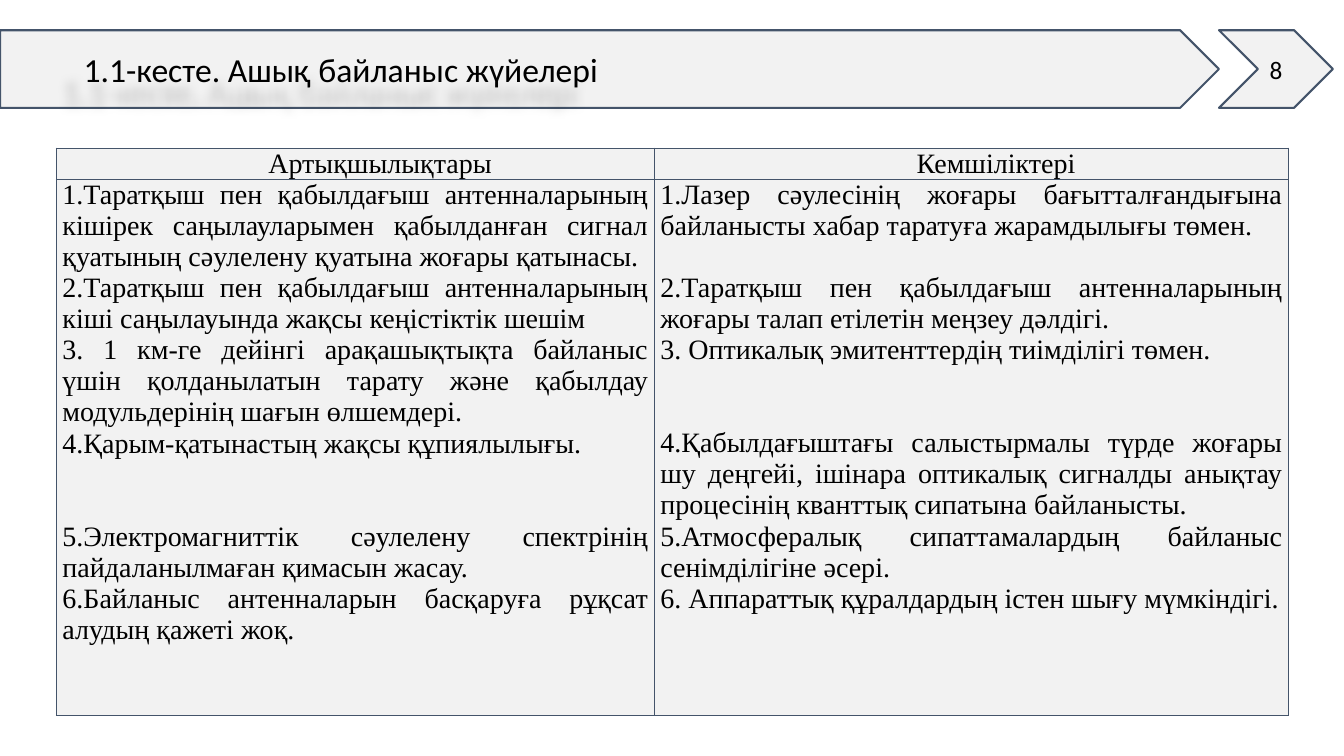
from lxml import etree
from pptx import Presentation
from pptx.dml.color import RGBColor
from pptx.enum.shapes import MSO_SHAPE
from pptx.enum.text import MSO_ANCHOR, PP_ALIGN
from pptx.oxml.ns import qn
from pptx.util import Inches, Pt

PENTAGON, CHEVRON = MSO_SHAPE.PENTAGON, MSO_SHAPE.CHEVRON
CENTER, JUSTIFY, LEFT = PP_ALIGN.CENTER, PP_ALIGN.JUSTIFY, PP_ALIGN.LEFT
MIDDLE = MSO_ANCHOR.MIDDLE

PANEL, BORDER, INK = "F2F2F2", "44546A", "000000"
HEADING_FONT, TABLE_FONT = "Calibri", "Times New Roman"
LINE_PT = 22.15  # height of one table line

# Each item: text and the number of blank lines above it
ADVANTAGES = [
    ("1.Таратқыш пен қабылдағыш антенналарының кішірек саңылауларымен "
     "қабылданған сигнал қуатының сәулелену қуатына жоғары қатынасы.", 0),
    ("2.Таратқыш пен қабылдағыш антенналарының кіші саңылауында жақсы "
     "кеңістіктік шешім", 0),
    ("3. 1 км-ге дейінгі арақашықтықта байланыс үшін қолданылатын тарату "
     "және қабылдау модульдерінің шағын өлшемдері.", 0),
    ("4.Қарым-қатынастың жақсы құпиялылығы.", 0),
    ("5.Электромагниттік сәулелену спектрінің пайдаланылмаған қимасын "
     "жасау.", 2),
    ("6.Байланыс антенналарын басқаруға рұқсат алудың қажеті жоқ.", 0),
]
DRAWBACKS = [
    ("1.Лазер сәулесінің жоғары бағытталғандығына байланысты хабар "
     "таратуға жарамдылығы төмен.", 0),
    ("2.Таратқыш пен қабылдағыш антенналарының жоғары талап етілетін "
     "меңзеу дәлдігі.", 1),
    ("3. Оптикалық эмитенттердің тиімділігі төмен.", 0),
    ("4.Қабылдағыштағы салыстырмалы түрде жоғары шу деңгейі, ішінара "
     "оптикалық сигналды анықтау процесінің кванттық сипатына "
     "байланысты.", 2),
    ("5.Атмосфералық сипаттамалардың байланыс сенімділігіне әсері.", 0),
    ("6. Аппараттық құралдардың істен шығу мүмкіндігі.", 0),
]


def rgb(value):
    return RGBColor.from_string(value)


def style_paragraph(paragraph, font_name, size, align):
    paragraph.alignment = align
    for run in paragraph.runs:
        run.font.name = font_name
        run.font.size = Pt(size)
        run.font.color.rgb = rgb(INK)


def add_arrow(slide, preset, left, width):
    arrow = slide.shapes.add_shape(
        preset, Inches(left), Inches(0.3), Inches(width), Inches(0.77))
    arrow.shadow.inherit = False
    arrow.fill.solid()
    arrow.fill.fore_color.rgb = rgb(PANEL)
    arrow.line.color.rgb = rgb(BORDER)
    arrow.line.width = Pt(1.5)
    return arrow


def add_soft_shadow(shape):
    effects = etree.SubElement(shape.element.spPr, qn("a:effectLst"))
    shadow = etree.SubElement(
        effects, qn("a:outerShdw"), blurRad=str(Inches(0.1)),
        dist=str(Inches(0.29)), dir="8100000", algn="tl", rotWithShape="0")
    color = etree.SubElement(shadow, qn("a:srgbClr"), val=INK)
    etree.SubElement(color, qn("a:alpha"), val="20000")


def add_title(slide, text):
    title = slide.shapes.add_textbox(
        Inches(0.73), Inches(0.44), Inches(11.08), Inches(0.5))
    title.text_frame.word_wrap = True
    title.text_frame.text = text
    style_paragraph(title.text_frame.paragraphs[0], HEADING_FONT, 24, LEFT)
    add_soft_shadow(title)


def add_page_number(slide, number):
    badge = add_arrow(slide, CHEVRON, 12.09, 1.13)
    badge.text_frame.text = number
    badge.text_frame.vertical_anchor = MIDDLE
    style_paragraph(badge.text_frame.paragraphs[0], HEADING_FONT, 18, CENTER)


def style_cell(cell):
    cell.margin_left = cell.margin_right = Inches(0.06)
    cell.margin_top = cell.margin_bottom = 0
    properties = cell._tc.get_or_add_tcPr()
    for side in ("lnL", "lnR", "lnT", "lnB"):
        edge = etree.SubElement(properties, qn(f"a:{side}"), w=str(Pt(1)))
        fill = etree.SubElement(edge, qn("a:solidFill"))
        etree.SubElement(fill, qn("a:srgbClr"), val=BORDER)
    cell.fill.solid()
    cell.fill.fore_color.rgb = rgb(PANEL)


def fill_header(cell, text):
    style_cell(cell)
    cell.text_frame.text = text
    heading = cell.text_frame.paragraphs[0]
    style_paragraph(heading, TABLE_FONT, 20, CENTER)
    heading._p.get_or_add_pPr().set("indent", str(Inches(0.49)))


def fill_list(cell, items):
    style_cell(cell)
    cell.text_frame.text = "\n".join(text for text, _ in items)
    for paragraph, (_, blank_lines) in zip(cell.text_frame.paragraphs, items):
        style_paragraph(paragraph, TABLE_FONT, 20, JUSTIFY)
        if blank_lines:
            paragraph.space_before = Pt(blank_lines * LINE_PT)


def add_comparison(slide, columns):
    table = slide.shapes.add_table(
        2, len(columns), Inches(0.56), Inches(1.47),
        Inches(12.22), Inches(5.63)).table
    table.rows[0].height = Inches(0.31)
    table.rows[1].height = Inches(5.32)
    for index, (heading, width, items) in enumerate(columns):
        table.columns[index].width = Inches(width)
        fill_header(table.cell(0, index), heading)
        fill_list(table.cell(1, index), items)


def main():
    presentation = Presentation()
    presentation.slide_width = Inches(13.33)
    presentation.slide_height = Inches(7.5)
    slide = presentation.slides.add_slide(presentation.slide_layouts[6])

    # Comparison table
    add_comparison(slide, [
        ("Артықшылықтары", 5.93, ADVANTAGES),
        ("Кемшіліктері", 6.29, DRAWBACKS),
    ])

    # Heading band
    add_arrow(slide, PENTAGON, 0, 12.09)
    add_title(slide, "1.1-кесте. Ашық байланыс жүйелері")
    add_page_number(slide, "8")

    presentation.save("out.pptx")


if __name__ == "__main__":
    main()
